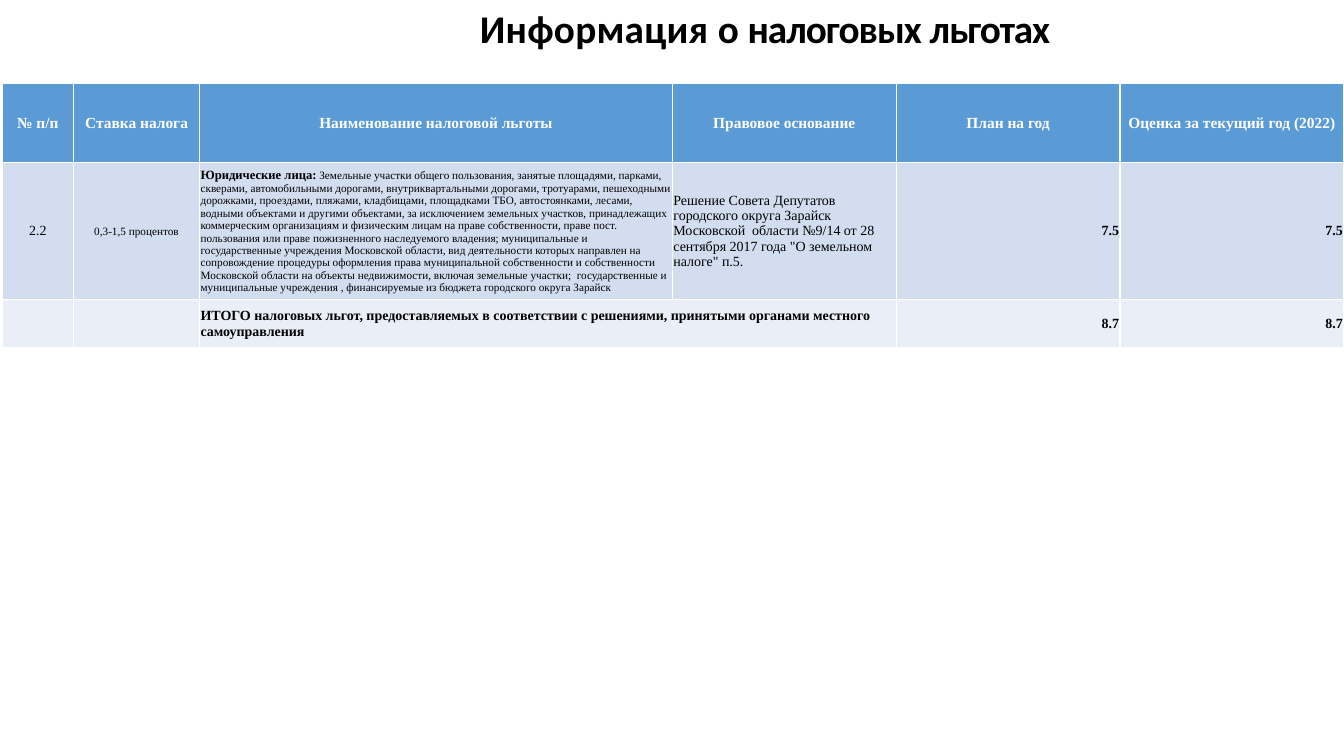
from dataclasses import dataclass

from pptx import Presentation, util as u
from pptx.dml.color import RGBColor
from pptx.enum import text


@dataclass(frozen=True)
class Theme:
    title_font: str = "Calibri"
    table_font: str = "Times New Roman"
    ink: str = "000000"
    header_ink: str = "FFFFFF"
    row_fills: tuple = ("5B9BD5", "D2DEEF", "EAEFF7")
    title: int = 28
    header: int = 11
    body: int = 10
    lead: int = 9
    small: int = 8


THEME = Theme()
LEFT, CENTER, RIGHT = (text.PP_ALIGN.LEFT, text.PP_ALIGN.CENTER, text.PP_ALIGN.RIGHT)

# Title as runs of text with letter spacing in hundredths of a point
TITLE_RUNS = [("Информация ", 20), ("о ", 0), ("налоговых ", -70), ("льготах", -80)]

# Column and row sizes of the table, as proportions of its box
COLUMNS = (0.71, 1.25, 4.69, 2.22, 2.22, 2.22)
ROWS = (0.78, 1.35, 0.48)

HEADERS = ("№ п/п", "Ставка налога", "Наименование налоговой льготы",
           "Правовое основание", "План на год", "Оценка за текущий год (2022)")

# Benefit wording, one clause an item
BENEFIT_CLAUSES = (
    " Земельные участки общего пользования, занятые площадями, парками, скверами, "
    "автомобильными дорогами, внутриквартальными дорогами, тротуарами, пешеходными "
    "дорожками, проездами, пляжами, кладбищами, площадками ТБО, автостоянками, лесами, "
    "водными объектами и другими объектами,",
    "за исключением земельных участков, принадлежащих коммерческим организациям и "
    "физическим лицам на праве собственности, праве пост. пользования или праве "
    "пожизненного наследуемого владения;",
    "муниципальные и государственные учреждения Московской области, вид деятельности "
    "которых направлен на сопровождение процедуры оформления права муниципальной "
    "собственности и собственности Московской области на объекты недвижимости, включая "
    "земельные участки; ",
    "государственные и муниципальные учреждения , финансируемые из бюджета городского "
    "округа Зарайск",
)
BASIS = ("Решение Совета Депутатов городского округа Зарайск Московской  области №9/14 "
         "от 28 сентября 2017 года \"О земельном налоге\" п.5.")
TOTAL = ("ИТОГО налоговых льгот, предоставляемых в соответствии с решениями, принятыми "
         "органами местного самоуправления")


def set_attributes(target, **values):
    for name, value in values.items():
        setattr(target, name, value)


def add_run(paragraph, words, font, size, color, bold):
    run = paragraph.add_run()
    run.text = words
    set_attributes(run.font, name=font, size=u.Pt(size), bold=bold)
    run.font.color.rgb = RGBColor.from_string(color)
    return run


def place_title(slide, left, top, width, height):
    title = slide.shapes.title
    set_attributes(title, left=left, top=top, width=width, height=height)
    frame = title.text_frame
    set_attributes(frame, margin_left=0, margin_right=0, margin_bottom=0,
                   margin_top=u.Inches(0.01), word_wrap=True,
                   vertical_anchor=text.MSO_ANCHOR.MIDDLE,
                   auto_size=text.MSO_AUTO_SIZE.SHAPE_TO_FIT_TEXT)
    paragraph = frame.paragraphs[0]
    set_attributes(paragraph, alignment=LEFT, space_before=u.Pt(1.1))
    paragraph_format = paragraph._p.get_or_add_pPr()
    paragraph_format.set("marL", str(u.Inches(0.01)))
    for words, spacing in TITLE_RUNS:
        run = add_run(paragraph, words, THEME.title_font, THEME.title, THEME.ink, True)
        run._r.get_or_add_rPr().set("spc", str(spacing))


def fill_cell(cell, alignment, runs, color):
    paragraph = cell.text_frame.paragraphs[0]
    paragraph.alignment = alignment
    for words, size, bold in runs:
        add_run(paragraph, words, THEME.table_font, size, color, bold)


def place_table(slide, left, top, width, height):
    table = slide.shapes.add_table(len(ROWS), len(COLUMNS), left, top, width, height).table
    for column, share in zip(table.columns, COLUMNS):
        column.width = int(width * share / sum(COLUMNS))
    for row, share, fill in zip(table.rows, ROWS, THEME.row_fills):
        row.height = int(height * share / sum(ROWS))
        for cell in row.cells:
            set_attributes(cell, margin_left=u.Inches(0.01), margin_right=u.Inches(0.01),
                           margin_top=u.Inches(0.01), margin_bottom=0,
                           vertical_anchor=text.MSO_ANCHOR.MIDDLE)
            cell.fill.solid()
            cell.fill.fore_color.rgb = RGBColor.from_string(fill)

    # Header row
    for index, words in enumerate(HEADERS):
        fill_cell(table.cell(0, index), CENTER, [(words, THEME.header, True)],
                  THEME.header_ink)

    # Benefit row and total row, keyed by row and column
    table.cell(2, 2).merge(table.cell(2, 3))
    body = {
        (1, 0): (CENTER, [("2.2", THEME.body, False)]),
        (1, 1): (CENTER, [("0,3-1,5 процентов", THEME.small, False)]),
        (1, 2): (LEFT, [("Юридические лица:", THEME.lead, True),
                        (" ".join(BENEFIT_CLAUSES), THEME.small, False)]),
        (1, 3): (LEFT, [(BASIS, THEME.body, False)]),
        (2, 2): (LEFT, [(TOTAL, THEME.body, True)]),
    }
    for row, amount in ((1, "7.5"), (2, "8.7")):
        for column in (4, 5):
            body[row, column] = (RIGHT, [(amount, THEME.body, True)])
    for (row, column), (alignment, runs) in body.items():
        fill_cell(table.cell(row, column), alignment, runs, THEME.ink)


def main():
    presentation = Presentation()
    set_attributes(presentation, slide_width=u.Inches(13.33), slide_height=u.Inches(7.5))
    slide = presentation.slides.add_slide(presentation.slide_layouts[5])
    place_title(slide, u.Inches(4.75), u.Inches(0.03), u.Inches(12.92), u.Inches(0.49))
    place_table(slide, u.Inches(0.02), u.Inches(0.83),
                u.Inches(sum(COLUMNS)), u.Inches(sum(ROWS)))
    presentation.save("out.pptx")


if __name__ == "__main__":
    main()
